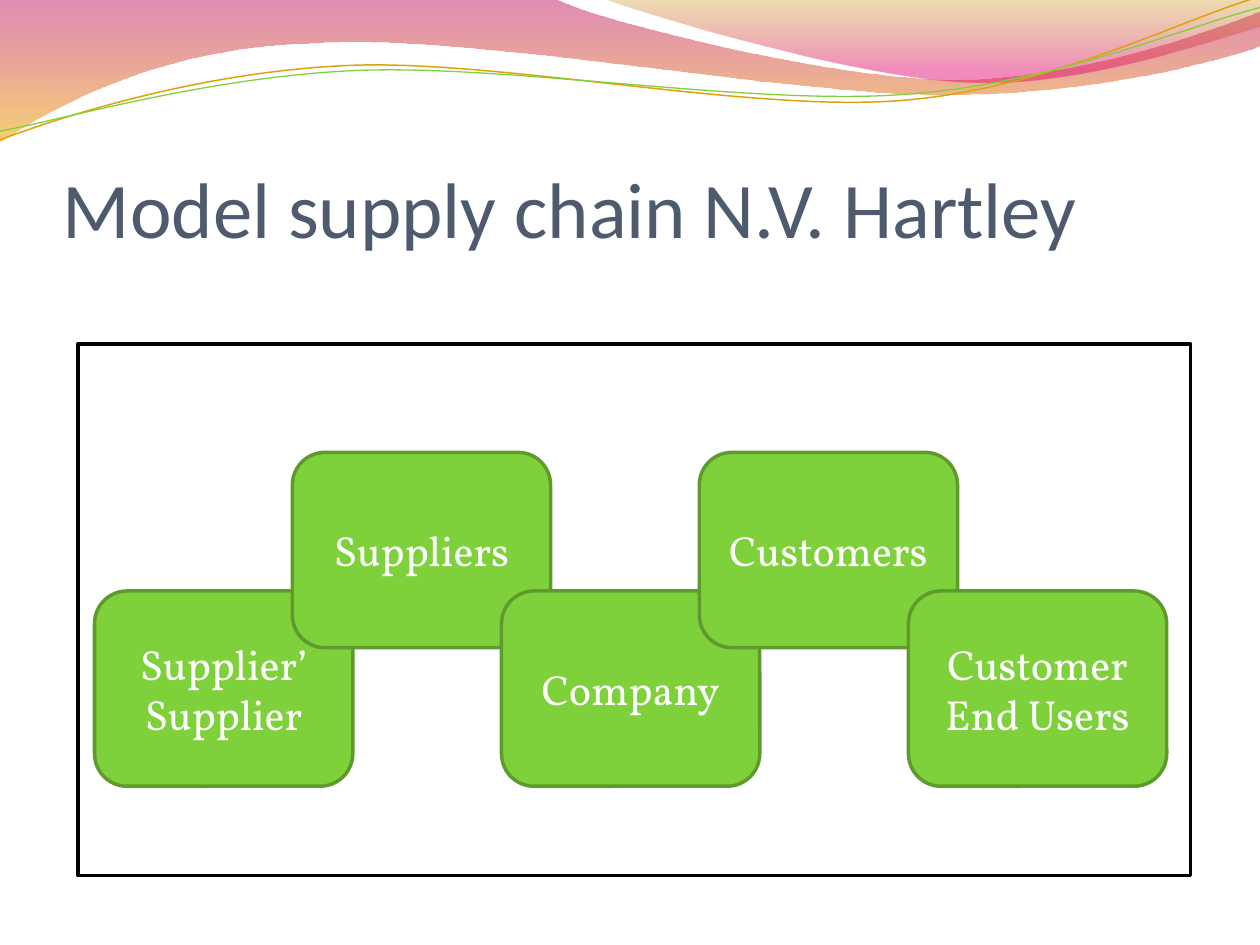
from pptx import Presentation
from pptx.dml.color import RGBColor
from pptx.enum.shapes import MSO_SHAPE
from pptx.enum.text import MSO_ANCHOR, PP_ALIGN
from pptx.oxml.ns import qn
from pptx.util import Inches, Pt
from lxml import etree

RECTANGLE, ROUNDED = MSO_SHAPE.RECTANGLE, MSO_SHAPE.ROUNDED_RECTANGLE
BOTTOM, MIDDLE = MSO_ANCHOR.BOTTOM, MSO_ANCHOR.MIDDLE
LEFT, CENTER = PP_ALIGN.LEFT, PP_ALIGN.CENTER

# Content
TITLE = "Model supply chain N.V. Hartley"
STAGES = ["Supplier’ Supplier", "Suppliers", "Company", "Customers", "Customer End Users"]

# Waves: a step of one point is straight, a step of three points is a Bezier curve
BANDS = [
    {"start": (0, 0),
     "steps": [[(4.4, -0.01)],
               [(4.76, 0.17), (6.64, 0.63), (7.58, 0.63)],
               [(8.53, 0.63), (9.58, 0.26), (10, 0.09)],
               [(10.01, 0.36)],
               [(9.83, 0.44), (8.7, 0.76), (7.46, 0.75)],
               [(6.22, 0.75), (3.82, 0.28), (2.57, 0.34)],
               [(1.29, 0.36), (0.46, 0.83), (-0.01, 1.13)]],
     "stops": [(0, "BD0059", 45), (100, "F0AB00", 55)]},
    {"start": (4.79, -0.01),
     "steps": [[(5.09, 0.11), (6.82, 0.62), (7.69, 0.65)],
               [(8.56, 0.69), (9.61, 0.32), (10, 0.21)],
               [(10, 0)]],
     "stops": [(0, "C38B00", 30), (80, "E1006B", 45)]},
]
STRANDS = [
    {"start": (0, 1.11),
     "steps": [[(0.48, 0.93), (1.58, 0.57), (2.77, 0.52)],
               [(3.95, 0.47), (5.93, 0.89), (7.13, 0.8)],
               [(8.33, 0.71), (9.38, 0.15), (9.98, -0.02)]],
     "line": ("E0A209", 0.85)},
    {"start": (0, 1.04),
     "steps": [[(0.47, 0.96), (1.64, 0.61), (2.83, 0.56)],
               [(4.03, 0.51), (5.97, 0.84), (7.17, 0.75)],
               [(8.36, 0.67), (9.41, 0.21), (10, 0.06)]],
     "line": ("7FD13B", 0.75)},
]

# Chain layout: lower and upper boxes alternate
BOX_WIDTH, BOX_HEIGHT = 2.05, 1.55
CHAIN_LEFT, PAIR_PITCH, UPPER_SHIFT = 0.75, 3.23, 1.57
LOWER_TOP, UPPER_TOP = 4.69, 3.59


def color(value):
    return RGBColor.from_string(value)


def set_line(shape, value, width):
    shape.line.color.rgb = color(value)
    shape.line.width = Pt(width)


def add_wave(slide, wave, close):
    """Lay all points as lines, then merge each group of three into a curve."""
    start_x, start_y = wave["start"]
    builder = slide.shapes.build_freeform(Inches(start_x), Inches(start_y))
    points = [(Inches(x), Inches(y)) for step in wave["steps"] for x, y in step]
    builder.add_line_segments(points, close=close)
    shape = builder.convert_to_shape()
    shape.shadow.inherit = False
    lines = iter(list(shape._element.iter(qn("a:lnTo"))))
    for step in wave["steps"]:
        first, *others = [next(lines) for _ in step]
        if others:
            curve = etree.Element(qn("a:cubicBezTo"))
            first.addprevious(curve)
            for line in (first, *others):
                curve.append(line[0])
                line.getparent().remove(line)
    return shape


def fill_gradient(shape, stops):
    shape.fill.gradient()
    shape.fill.gradient_angle = 270
    for stop, (position, value, _) in zip(shape.fill.gradient_stops, stops):
        stop.position = position / 100
        stop.color.rgb = color(value)
    for element, (_, _, opacity) in zip(shape._element.iter(qn("a:srgbClr")), stops):
        etree.SubElement(element, qn("a:alpha")).set("val", str(opacity * 1000))


def add_box(slide, kind, left, top, width, height, fill, line):
    shape = slide.shapes.add_shape(kind, Inches(left), Inches(top), Inches(width), Inches(height))
    shape.shadow.inherit = False
    shape.fill.solid()
    shape.fill.fore_color.rgb = color(fill)
    set_line(shape, line, 2)
    return shape


def write(shape, text, font, size, value, align, anchor):
    frame = shape.text_frame
    frame.word_wrap = True
    frame.vertical_anchor = anchor
    paragraph = frame.paragraphs[0]
    paragraph.alignment = align
    run = paragraph.add_run()
    run.text = text
    run.font.name = font
    run.font.size = Pt(size)
    run.font.color.rgb = color(value)


presentation = Presentation()
presentation.slide_width, presentation.slide_height = Inches(10), Inches(7.5)
slide = presentation.slides.add_slide(presentation.slide_layouts[6])

# Wave header
for band in BANDS:
    shape = add_wave(slide, band, True)
    fill_gradient(shape, band["stops"])
    shape.line.fill.background()
for strand in STRANDS:
    shape = add_wave(slide, strand, False)
    shape.fill.background()
    set_line(shape, *strand["line"])

# Frame and title
add_box(slide, RECTANGLE, 0.62, 2.73, 8.83, 4.22, "FFFFFF", "000000")
title = slide.shapes.add_textbox(Inches(0.5), Inches(0.77), Inches(9), Inches(1.25))
title.text_frame.margin_left = title.text_frame.margin_right = 0
title.text_frame.margin_bottom = 0
write(title, TITLE, "Calibri", 45, "4E5B6F", LEFT, BOTTOM)

# Supply chain
for index, stage in enumerate(STAGES):
    pair, upper = divmod(index, 2)
    left = CHAIN_LEFT + pair * PAIR_PITCH + upper * UPPER_SHIFT
    top = UPPER_TOP if upper else LOWER_TOP
    box = add_box(slide, ROUNDED, left, top, BOX_WIDTH, BOX_HEIGHT, "7FD13B", "5E9B2C")
    write(box, stage, "Vollkorn", 24, "FFFFFF", CENTER, MIDDLE)

presentation.save("out.pptx")
